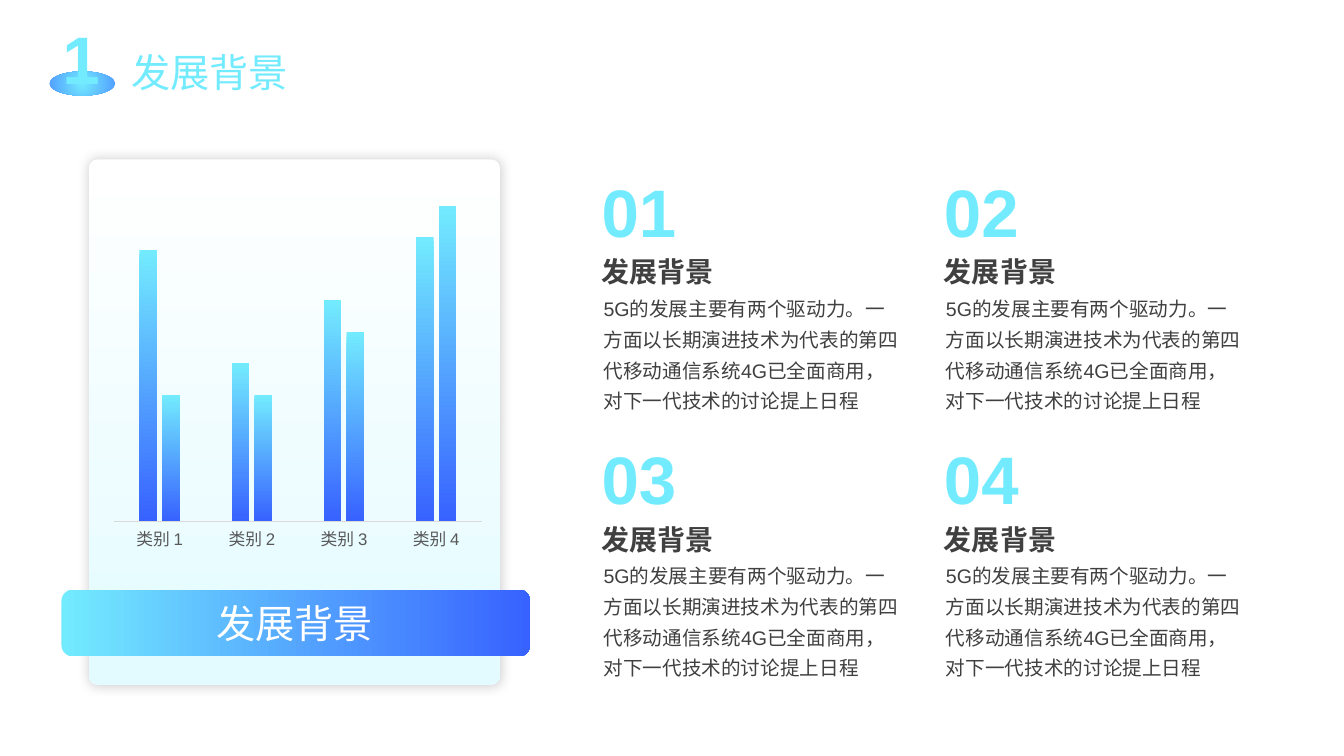
import dataclasses
import lxml.etree
import pptx
import pptx.chart.data
import pptx.dml.color
import pptx.enum.chart
import pptx.enum.shapes
import pptx.enum.text
import pptx.oxml
import pptx.oxml.ns
import pptx.util

Cm = pptx.util.Cm
Shape = pptx.enum.shapes.MSO_SHAPE
Align = pptx.enum.text.PP_ALIGN
Anchor = pptx.enum.text.MSO_ANCHOR
Auto = pptx.enum.text.MSO_AUTO_SIZE
NS = pptx.oxml.ns.nsdecls("a")


def rgb(code):
    return pptx.dml.color.RGBColor.from_string(code)


@dataclasses.dataclass(frozen=True)
class Theme:
    font: str = "Arial"
    cyan: str = "73EBFE"
    blue: str = "3762FF"
    sky: str = "519DFF"
    pale: str = "E3FBFF"
    white: str = "FFFFFF"
    ink: str = "404040"
    label: str = "595959"
    rule: str = "D9D9D9"
    huge: int = 48
    large: int = 28
    head: int = 20
    body: int = 14
    small: int = 12


class Deck:
    def __init__(self, theme):
        self.theme = theme
        self.show = pptx.Presentation()
        self.show.slide_width = Cm(33.87)
        self.show.slide_height = Cm(19.05)
        self.slide = self.show.slides.add_slide(self.show.slide_layouts[5])

    def blend(self, fill, start, end, angle=0):
        fill.gradient()
        fill.gradient_angle = angle
        for stop, code in zip(fill.gradient_stops, (start, end)):
            stop.color.rgb = rgb(code)

    def shape(self, kind, box, start, end, angle=0):
        item = self.slide.shapes.add_shape(kind, *map(Cm, box))
        item.shadow.inherit = False
        item.line.fill.background()
        self.blend(item.fill, start, end, angle)
        return item

    def glow(self, item):
        effects = item._element.spPr.find(pptx.oxml.ns.qn("a:effectLst"))
        effects.append(pptx.oxml.parse_xml(
            f'<a:outerShdw {NS} blurRad="114300" dist="0" dir="0" rotWithShape="0">'
            '<a:srgbClr val="000000"><a:alpha val="20000"/></a:srgbClr></a:outerShdw>'))

    def radial(self, item):
        grad = item._element.spPr.find(pptx.oxml.ns.qn("a:gradFill"))
        line = grad.find(pptx.oxml.ns.qn("a:lin"))
        grad.replace(line, pptx.oxml.parse_xml(
            f'<a:path {NS} path="circle">'
            '<a:fillToRect l="50000" t="50000" r="50000" b="50000"/></a:path>'))

    def letter(self, item, text, size, color, bold=False, align=Align.LEFT,
               space=1.0, anchor=Anchor.TOP):
        frame = item.text_frame
        frame.text = text
        frame.word_wrap = True
        frame.vertical_anchor = anchor
        frame.auto_size = Auto.SHAPE_TO_FIT_TEXT if anchor == Anchor.TOP else Auto.NONE
        line = frame.paragraphs[0]
        line.alignment = align
        line.line_spacing = space
        line.font.name = self.theme.font
        line.font.size = pptx.util.Pt(size)
        line.font.bold = bold
        line.font.color.rgb = rgb(color)

    def text(self, box, *args, **style):
        self.letter(self.slide.shapes.add_textbox(*map(Cm, box)), *args, **style)

    def title(self, box, text):
        item = self.slide.shapes.title
        item.left, item.top, item.width, item.height = map(Cm, box)
        self.letter(item, text, self.theme.large, self.theme.cyan, align=Align.CENTER)

    def chart(self, box, names, series):
        look = self.theme
        data = pptx.chart.data.CategoryChartData()
        data.categories = names
        for name, values in series.items():
            data.add_series(name, values)
        kind = pptx.enum.chart.XL_CHART_TYPE.COLUMN_CLUSTERED
        chart = self.slide.shapes.add_chart(kind, *map(Cm, box), data).chart
        chart.has_legend = False
        chart.has_title = False
        chart.font.name = look.font
        chart.font.size = pptx.util.Pt(look.small)
        chart.font.color.rgb = rgb(look.label)
        plot = chart.plots[0]
        plot.gap_width = 290
        plot.overlap = -28
        plot.vary_by_categories = False
        for bars in plot.series:
            self.blend(bars.format.fill, look.cyan, look.blue, 270)
        base = chart.category_axis
        base.major_tick_mark = pptx.enum.chart.XL_TICK_MARK.NONE
        base.format.line.color.rgb = rgb(look.rule)
        base.format.line.width = pptx.util.Pt(0.75)
        scale = chart.value_axis
        scale.minimum_scale = 0
        scale.maximum_scale = 120
        scale.has_major_gridlines = False
        scale.visible = False
        self.layout(chart, x=0.02, y=0.02, w=0.96, h=0.89)

    def layout(self, chart, **parts):
        qn = pptx.oxml.ns.qn
        area = chart._chartSpace.find(".//" + qn("c:plotArea"))
        frame = area.find(qn("c:layout"))
        if frame is None:
            frame = lxml.etree.Element(qn("c:layout"))
            area.insert(0, frame)
        hand = lxml.etree.SubElement(frame, qn("c:manualLayout"))
        rules = {"layoutTarget": "inner", "xMode": "edge", "yMode": "edge", **parts}
        for name, value in rules.items():
            lxml.etree.SubElement(hand, qn("c:" + name)).set("val", str(value))

    def topic(self, left, top, mark, head, body):
        look = self.theme
        self.text((left, top + 2.13, 5.05, 1.12), head, look.head, look.ink, bold=True)
        self.text((left, top, 2.8, 2.3), mark, look.huge, look.cyan, bold=True)
        self.text((left + 0.05, top + 3.02, 8.03, 3.33), body, look.body, look.ink,
                  space=1.3)


def main():
    look = Theme()
    deck = Deck(look)
    head = "发展背景"
    body = ("5G的发展主要有两个驱动力。一方面以长期演进技术为代表的第四代移动通信系统4G"
            "已全面商用，对下一代技术的讨论提上日程")

    card = deck.shape(Shape.ROUNDED_RECTANGLE, (2.24, 4.02, 10.36, 13.23),
                      look.white, look.pale, 270)
    card.adjustments[0] = 0.02
    deck.glow(card)
    deck.shape(Shape.ROUNDED_RECTANGLE, (1.55, 14.86, 11.81, 1.68), look.cyan, look.blue)
    deck.text((2.49, 15.01, 9.88, 1.37), head, look.large, look.white,
              align=Align.CENTER, anchor=Anchor.MIDDLE)

    deck.title((2.69, 1.09, 5.18, 1.45), head)
    disc = deck.shape(Shape.OVAL, (1.25, 1.8, 1.65, 0.61), look.cyan, look.sky)
    deck.radial(disc)
    deck.text((1.32, 0.3, 1.42, 2.31), "1", look.huge, look.cyan, bold=True,
              align=Align.CENTER)

    deck.chart((2.67, 3.38, 9.68, 10.72), [f"类别 {n}" for n in range(1, 5)],
               {"Series 1": (86, 50, 70, 90), "Series 2": (40, 40, 60, 100)})

    for index in range(4):
        row, col = divmod(index, 2)
        deck.topic(14.91 + 8.63 * col, 4.17 + 6.73 * row, f"{index + 1:02}", head, body)

    deck.show.save("out.pptx")


if __name__ == "__main__":
    main()
